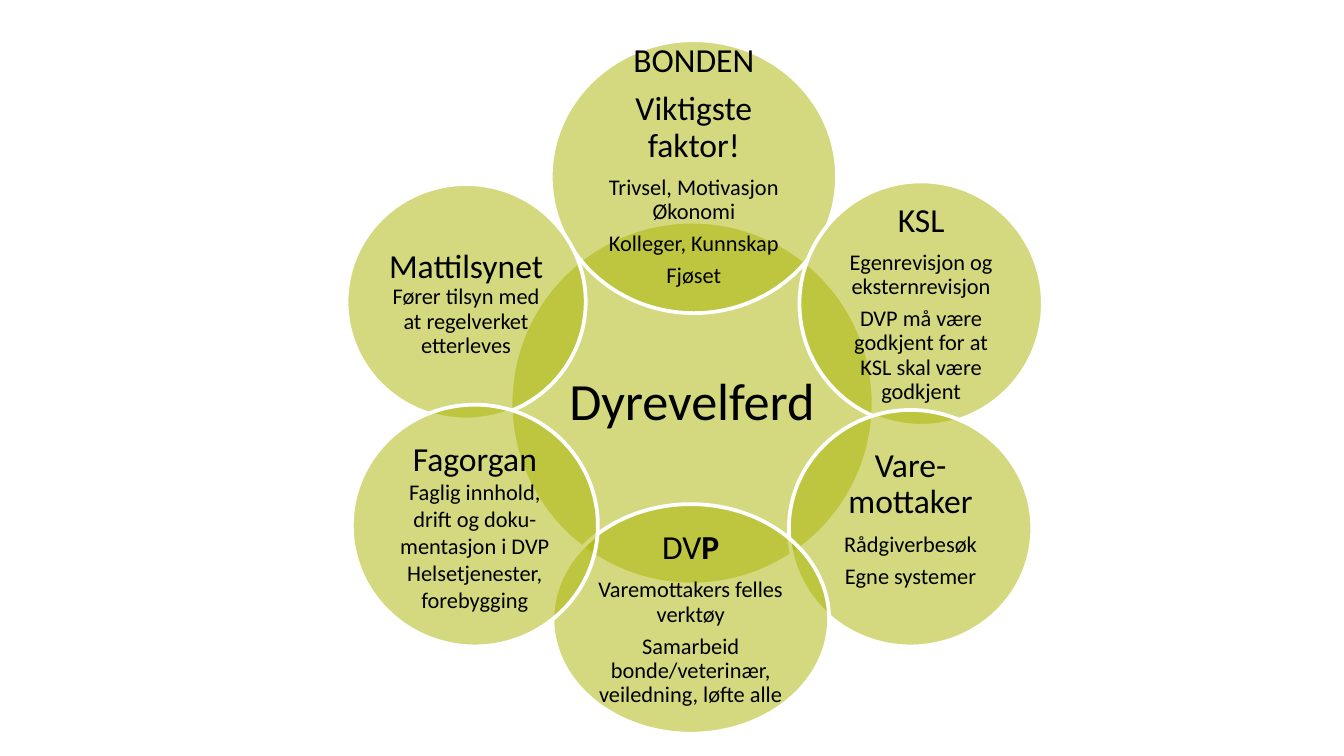
from dataclasses import dataclass

from lxml import etree
from pptx import Presentation
from pptx import util as u
from pptx.dml.color import RGBColor
from pptx.enum import shapes, text
from pptx.oxml import ns


@dataclass(frozen=True)
class Theme:
    """Colours, font and type sizes of the deck."""
    fill: RGBColor = RGBColor(0xAA, 0xB5, 0x00)
    line: RGBColor = RGBColor(0xFF, 0xFF, 0xFF)
    ink: RGBColor = RGBColor(0x00, 0x00, 0x00)
    font: str = "Calibri"
    core: int = 28
    head: int = 18
    body: int = 12


THEME = Theme()


@dataclass(frozen=True)
class Box:
    """A rectangle in centimetres."""
    left: float
    top: float
    width: float
    height: float

    def inside(self, left, top, width, height):
        """Return a box placed relative to this one."""
        return Box(self.left + left, self.top + top, width, height)


def span(words, size=THEME.body, bold=False):
    """Describe one piece of text and its format."""
    return words, size, bold


def para(*spans, spacing=0.9, after=0.35):
    """Describe a paragraph, its space after being a share of the type size."""
    return spans, spacing, after


def head(words):
    """Describe a heading paragraph."""
    return para(span(words, size=THEME.head))


def body(words):
    """Describe a body paragraph."""
    return para(span(words))


def write(frame, paras):
    """Fill a text frame with the described paragraphs."""
    for index, (spans, spacing, after) in enumerate(paras):
        line = frame.add_paragraph() if index else frame.paragraphs[0]
        line.alignment = text.PP_ALIGN.CENTER
        line.line_spacing = spacing
        line.space_before = u.Pt(0)
        line.space_after = u.Pt(round(after * spans[-1][1], 1))
        for words, size, bold in spans:
            run = line.add_run()
            run.text = words
            run.font.name = THEME.font
            run.font.size = u.Pt(size)
            run.font.bold = bold
            run.font.color.rgb = THEME.ink


def circle(group, box, paras, lift=0):
    """Draw one half-transparent circle with its text, raised by a lower inset."""
    shape = group.shapes.add_shape(
        shapes.MSO_SHAPE.OVAL, u.Cm(box.left), u.Cm(box.top),
        u.Cm(box.width), u.Cm(box.height))
    shape.shadow.inherit = False
    shape.fill.solid()
    shape.fill.fore_color.rgb = THEME.fill
    colour = shape.fill._xPr.find(".//" + ns.qn("a:srgbClr"))
    etree.SubElement(colour, ns.qn("a:alpha"), val="50000")
    shape.line.color.rgb = THEME.line
    shape.line.width = u.Pt(2)
    frame = shape.text_frame
    frame.word_wrap = True
    frame.vertical_anchor = text.MSO_ANCHOR.MIDDLE
    frame.margin_left = frame.margin_right = frame.margin_top = u.Cm(0.08)
    frame.margin_bottom = u.Cm(0.08 + lift)
    write(frame, paras)


def wheel(page, box):
    """Draw the centre circle and the six circles around it."""
    group = page.shapes.add_group_shape()
    circle(group, box.inside(3.1, 3.43, 6.86, 6.86),
           [para(span("Dyrevelferd", size=THEME.core))])
    circle(group, box.inside(3.86, 0, 5.41, 5.16),
           [head("BONDEN"), head("Viktigste faktor!"),
            body("Trivsel, Motivasjon Økonomi"),
            body("Kolleger, Kunnskap"), body("Fjøset")], lift=0.4)
    circle(group, box.inside(8.56, 2.67, 4.6, 4.62),
           [head("KSL"), body("Egenrevisjon og eksternrevisjon"),
            body("DVP må være godkjent for at KSL skal være godkjent")])
    circle(group, box.inside(8.36, 6.99, 4.6, 4.47),
           [head("Vare-mottaker"), body("Rådgiverbesøk"),
            body("Egne systemer")], lift=0.36)
    circle(group, box.inside(3.89, 8.77, 5.23, 4.34),
           [para(span("DV", size=THEME.head),
                 span("P", size=THEME.head, bold=True)),
            body("Varemottakers felles verktøy"),
            body("Samarbeid bonde/veterinær, veiledning, løfte alle")])
    circle(group, box.inside(0, 2.72, 4.52, 4.45),
           [para(span("Mattilsynet", size=THEME.head), spacing=1.0, after=0),
            body("Fører tilsyn med at regelverket etterleves")])
    circle(group, box.inside(0.1, 6.89, 4.65, 4.57),
           [para(span("Fagorgan ", size=THEME.head),
                 span("Faglig innhold, drift og doku-mentasjon i DVP "
                      "Helsetjenester, forebygging"),
                 spacing=1.0, after=0)])


def main():
    """Build and save the deck."""
    deck = Presentation()
    deck.slide_width = u.Cm(25.4)
    deck.slide_height = u.Cm(14.29)
    page = deck.slides.add_slide(deck.slide_layouts.get_by_name("Blank"))
    wheel(page, Box(6.55, 0.76, 13.17, 13.11))
    deck.save("out.pptx")


if __name__ == "__main__":
    main()
